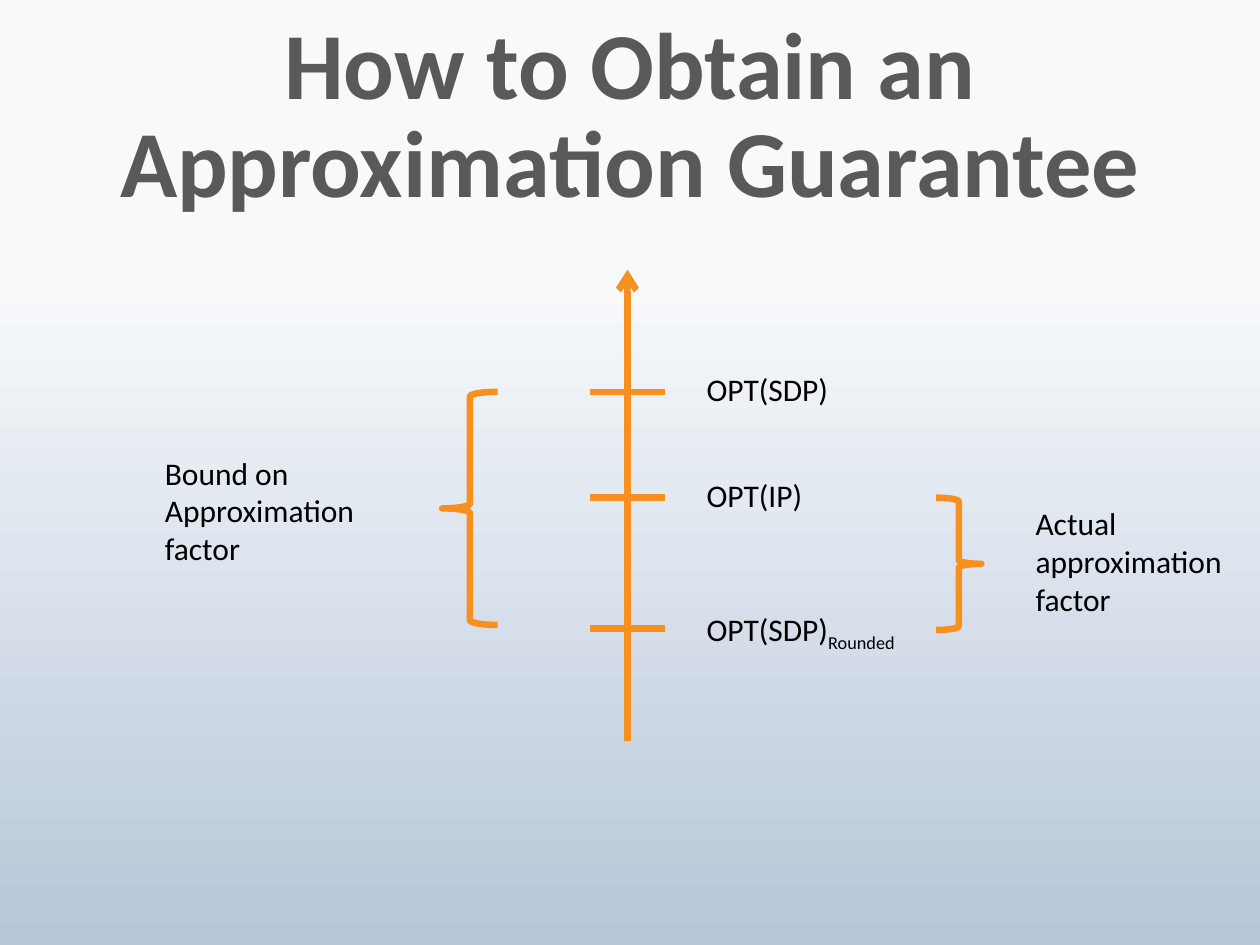
from dataclasses import dataclass

from lxml import etree
from pptx import Presentation
from pptx.dml.color import RGBColor
from pptx.enum.shapes import MSO_CONNECTOR, MSO_SHAPE
from pptx.enum.text import MSO_ANCHOR, MSO_AUTO_SIZE, PP_ALIGN
from pptx.oxml.ns import qn
from pptx.util import Inches, Pt

STRAIGHT = MSO_CONNECTOR.STRAIGHT
LEFT_BRACE = MSO_SHAPE.LEFT_BRACE
RIGHT_BRACE = MSO_SHAPE.RIGHT_BRACE
MIDDLE = MSO_ANCHOR.MIDDLE
CENTER = PP_ALIGN.CENTER
NO_AUTOFIT = MSO_AUTO_SIZE.NONE
GROW = MSO_AUTO_SIZE.SHAPE_TO_FIT_TEXT

ORANGE = "F7901E"
BLACK = "000000"
TITLE_GRAY = "595959"
FONT = "Calibri"
LINE_WIDTH = Pt(3.75)
AXIS_X = 4.98
TICK_HALF = 0.3
LABEL_LEFT = 5.51


@dataclass(frozen=True)
class Level:
    y: float
    label: str
    label_top: float
    label_width: float
    subscript: str = ""


@dataclass(frozen=True)
class Gap:
    """A brace between two levels, with the note that explains it."""
    brace: MSO_SHAPE
    left: float
    top: float
    width: float
    height: float
    note: tuple[str, ...]
    note_left: float
    note_top: float


LEVELS = (
    Level(3.11, "OPT(SDP)", 2.89, 1.37),
    Level(3.95, "OPT(IP)", 3.73, 1.37),
    Level(4.99, "OPT(SDP)", 4.79, 3, "Rounded"),
)
GAPS = (
    Gap(RIGHT_BRACE, 7.43, 3.95, 0.36, 1.05,
        ("Actual approximation factor",), 8.12, 3.95),
    Gap(LEFT_BRACE, 3.51, 3.11, 0.44, 1.85,
        ("Bound on", "Approximation factor"), 1.21, 3.55),
)


def color(hex_value: str) -> RGBColor:
    return RGBColor.from_string(hex_value)


def paint_background(slide) -> None:
    fill = slide.background.fill
    fill.gradient()
    fill.gradient_angle = 270
    stops = ((0.3, "F7F9FB"), (1, "B7C6D9"))
    for stop, (position, hex_value) in zip(fill.gradient_stops, stops):
        stop.position = position
        stop.color.rgb = color(hex_value)


def set_title(slide, text: str) -> None:
    title = slide.shapes.title
    title.left, title.top = Inches(0), Inches(0.25)
    title.width, title.height = Inches(10), Inches(1.38)
    frame = title.text_frame
    frame.text = text
    frame.auto_size = NO_AUTOFIT
    frame.vertical_anchor = MIDDLE
    paragraph = frame.paragraphs[0]
    paragraph.alignment = CENTER
    paragraph.line_spacing = Pt(56)
    font = paragraph.font
    font.name, font.size, font.bold = FONT, Pt(54), True
    font.color.rgb = color(TITLE_GRAY)


def add_line(slide, x1: float, y1: float, x2: float, y2: float, arrow: bool = False) -> None:
    connector = slide.shapes.add_connector(
        STRAIGHT, Inches(x1), Inches(y1), Inches(x2), Inches(y2))
    connector.line.color.rgb = color(ORANGE)
    connector.line.width = LINE_WIDTH
    properties = connector._element.spPr
    etree.SubElement(properties, qn("a:effectLst"))
    if arrow:
        etree.SubElement(properties.find(qn("a:ln")), qn("a:tailEnd"), type="arrow")


def add_text(slide, left: float, top: float, width: float, height: float,
             lines: tuple[str, ...]):
    """Add a text box with one paragraph per line and return its last paragraph."""
    box = slide.shapes.add_textbox(
        Inches(left), Inches(top), Inches(width), Inches(height))
    frame = box.text_frame
    frame.word_wrap = True
    frame.auto_size = GROW
    frame.text = "\n".join(lines)
    for paragraph in frame.paragraphs:
        paragraph.font.name, paragraph.font.size = FONT, Pt(18)
        paragraph.font.color.rgb = color(BLACK)
    return paragraph


def add_level(slide, level: Level) -> None:
    add_line(slide, AXIS_X - TICK_HALF, level.y, AXIS_X + TICK_HALF, level.y)
    paragraph = add_text(slide, LABEL_LEFT, level.label_top, level.label_width, 0.4,
                         (level.label,))
    if level.subscript:
        run = paragraph.add_run()
        run.text = level.subscript
        run._r.get_or_add_rPr().set("baseline", "-25000")


def add_gap(slide, gap: Gap) -> None:
    brace = slide.shapes.add_shape(
        gap.brace, Inches(gap.left), Inches(gap.top), Inches(gap.width), Inches(gap.height))
    brace.shadow.inherit = False
    brace.fill.background()
    brace.line.color.rgb = color(ORANGE)
    brace.line.width = LINE_WIDTH
    add_text(slide, gap.note_left, gap.note_top, 2.09, 1.01, gap.note)


def main() -> None:
    presentation = Presentation()
    presentation.slide_width, presentation.slide_height = Inches(10), Inches(7.5)
    slide = presentation.slides.add_slide(presentation.slide_layouts.get_by_name("Title Only"))
    paint_background(slide)
    set_title(slide, "How to Obtain an Approximation Guarantee")
    add_line(slide, AXIS_X, 5.88, AXIS_X, 2.14, arrow=True)
    for level in LEVELS:
        add_level(slide, level)
    for gap in GAPS:
        add_gap(slide, gap)
    presentation.save("out.pptx")


if __name__ == "__main__":
    main()
